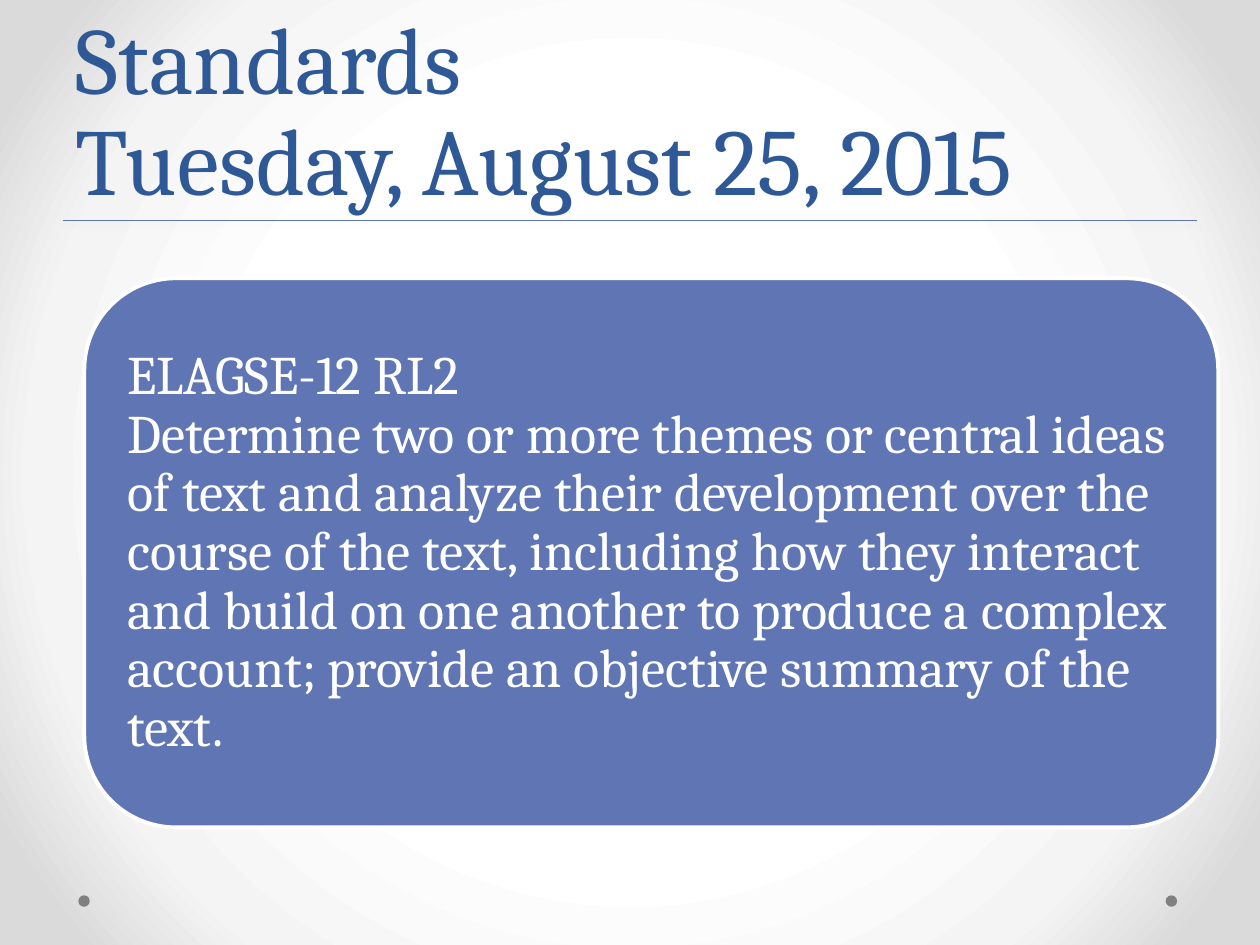
"""Build the standards slide: dated title, rule and one rounded statement panel."""
from lxml import etree
from pptx import Presentation
from pptx.dml.color import RGBColor
from pptx.enum.shapes import MSO_CONNECTOR, MSO_SHAPE
from pptx.enum.text import MSO_ANCHOR, MSO_AUTO_SIZE, PP_ALIGN
from pptx.oxml import parse_xml
from pptx.oxml.ns import nsdecls, qn
from pptx.util import Cm, Pt

STRAIGHT = MSO_CONNECTOR.STRAIGHT
OVAL = MSO_SHAPE.OVAL
ROUNDED = MSO_SHAPE.ROUNDED_RECTANGLE
BOTTOM, MIDDLE = MSO_ANCHOR.BOTTOM, MSO_ANCHOR.MIDDLE
LEFT = PP_ALIGN.LEFT
NO_AUTOFIT = MSO_AUTO_SIZE.NONE

FONT = "Cambria"
COLORS = {
    "title": "2F5897",
    "accent": "6076B4",
    "white": "FFFFFF",
    "dot": "808080",
    "shadow": "000000",
}
BACKGROUND_STOPS = [(50, "FFFFFF"), (76, "F4F4F4"), (92, "DADADA")]
TITLE = "Standards\vTuesday, August 25, 2015"
STANDARD = (
    "ELAGSE-12 RL2\vDetermine two or more themes or central ideas of text and "
    "analyze their development over the course of the text, including how they "
    "interact and build on one another to produce a complex account; provide an "
    "objective summary of the text."
)


def color(name):
    return RGBColor.from_string(COLORS[name])


def write_text(text_frame, text, size, color_name, spacing, anchor):
    text_frame.text = text
    text_frame.word_wrap = True
    text_frame.auto_size = NO_AUTOFIT
    text_frame.vertical_anchor = anchor
    paragraph = text_frame.paragraphs[0]
    paragraph.alignment = LEFT
    paragraph.line_spacing = spacing
    for run in paragraph.runs:
        run.font.name = FONT
        run.font.size = Pt(size)
        run.font.color.rgb = color(color_name)


presentation = Presentation()
presentation.slide_width = Cm(25.4)
presentation.slide_height = Cm(19.05)
slide = presentation.slides.add_slide(presentation.slide_layouts[5])

slide.background.fill.gradient()
gradient = slide.element.find(".//" + qn("a:gradFill"))
stops = "".join(
    f'<a:gs pos="{position * 1000}"><a:srgbClr val="{value}"/></a:gs>'
    for position, value in BACKGROUND_STOPS
)
radial = parse_xml(
    f'<a:gradFill {nsdecls("a")} rotWithShape="1"><a:gsLst>{stops}</a:gsLst>'
    '<a:path path="circle"><a:fillToRect l="50000" t="50000" r="50000" b="50000"/>'
    "</a:path></a:gradFill>"
)
gradient.getparent().replace(gradient, radial)

for left in (23.5, 1.58):
    dot = slide.shapes.add_shape(OVAL, Cm(left), Cm(18.05), Cm(0.23), Cm(0.23))
    dot.shadow.inherit = False
    dot.fill.solid()
    dot.fill.fore_color.rgb = color("dot")
    dot.line.fill.background()

title = slide.shapes.title
title.left, title.top, title.width, title.height = Cm(1.27), Cm(0), Cm(22.86), Cm(4.45)
write_text(title.text_frame, TITLE, 54, "title", Pt(58), BOTTOM)

rule = slide.shapes.add_connector(STRAIGHT, Cm(1.27), Cm(4.45), Cm(24.13), Cm(4.45))
rule.line.color.rgb = color("accent")
rule.line.width = Pt(0.75)
effects = etree.SubElement(rule.element.spPr, qn("a:effectLst"))
shadow = etree.SubElement(
    effects, qn("a:outerShdw"), blurRad=str(Pt(3.1)), dist=str(Pt(1.8)), dir="5400000"
)
shadow_color = etree.SubElement(shadow, qn("a:srgbClr"), val=COLORS["shadow"])
etree.SubElement(shadow_color, qn("a:alpha"), val="35000")

panel = slide.shapes.add_shape(ROUNDED, Cm(1.7), Cm(5.61), Cm(22.86), Cm(11.07))
panel.shadow.inherit = False
panel.fill.solid()
panel.fill.fore_color.rgb = color("accent")
panel.line.color.rgb = color("white")
panel.line.width = Pt(2.25)
panel_text = panel.text_frame
panel_text.margin_left = panel_text.margin_right = Cm(0.33)
panel_text.margin_top = panel_text.margin_bottom = Cm(0.33)
write_text(panel_text, STANDARD, 31, "white", 0.9, MIDDLE)

presentation.save("out.pptx")
